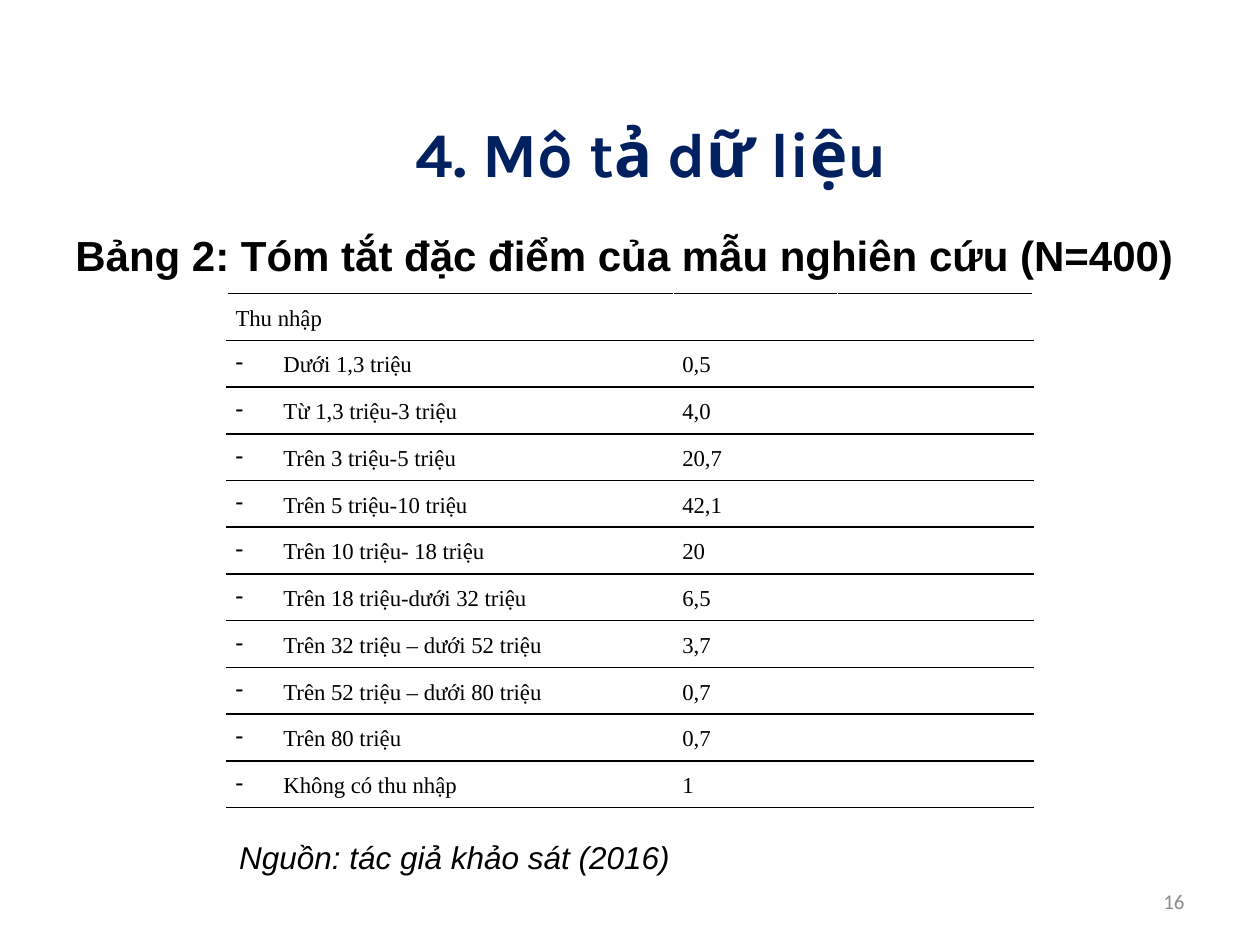
import pptx
import pptx.util
import pptx.dml.color
import pptx.enum.text
import pptx.oxml.ns
import lxml.etree

WIDE, HIGH = 10, 7.5
Inch, Pt = pptx.util.Inches, pptx.util.Pt
Align, Anchor = pptx.enum.text.PP_ALIGN, pptx.enum.text.MSO_ANCHOR

ROWS = [
    ("Thu nhập", ""),
    ("Dưới 1,3 triệu", "0,5"),
    ("Từ 1,3 triệu-3 triệu", "4,0"),
    ("Trên 3 triệu-5 triệu", "20,7"),
    ("Trên 5 triệu-10 triệu", "42,1"),
    ("Trên 10 triệu- 18 triệu", "20"),
    ("Trên 18 triệu-dưới 32 triệu", "6,5"),
    ("Trên 32 triệu – dưới 52 triệu", "3,7"),
    ("Trên 52 triệu – dưới 80 triệu", "0,7"),
    ("Trên 80 triệu", "0,7"),
    ("Không có thu nhập", "1"),
]
COLS = (3.54, 1.3, 1.55)


def color(code):
    return pptx.dml.color.RGBColor.from_string(code)


def node(parent, tag, **attrs):
    return lxml.etree.SubElement(parent, pptx.oxml.ns.qn(tag), attrs)


def style(para, face, size, code="000000", bold=False, italic=False):
    font = para.font
    font.name, font.size = face, Pt(size)
    font.bold, font.italic = bold, italic
    font.color.rgb = color(code)


def label(slide, box, text, face, size, align=Align.LEFT,
          anchor=Anchor.MIDDLE, **look):
    """Put one line of text in a box."""
    frame = slide.shapes.add_textbox(*map(Inch, box)).text_frame
    frame.word_wrap = True
    frame.vertical_anchor = anchor
    para = frame.paragraphs[0]
    para.text, para.alignment = text, align
    style(para, face, size, **look)


def rule(cell, side):
    """Draw a thin black line on one side of a cell."""
    line = node(cell._tc.get_or_add_tcPr(), side, w=str(Pt(1)))
    node(node(line, "a:solidFill"), "a:srgbClr", val="000000")


def dash(para):
    """Give a paragraph a hanging dash."""
    props = para._p.get_or_add_pPr()
    props.set("marL", str(Inch(0.38)))
    props.set("indent", str(-Inch(0.38)))
    node(props, "a:buChar", char="-")


def grid(slide, box):
    """Income table: a heading row, then dashed items with their shares."""
    frame = slide.shapes.add_table(len(ROWS), len(COLS), *map(Inch, box))
    table = frame.table
    table.first_row = table.horz_banding = False
    for col, share in zip(table.columns, COLS):
        col.width = Inch(box[2] * share / sum(COLS))
    for r, row in enumerate(ROWS):
        table.rows[r].height = Inch(box[3] / len(ROWS))
        for c in range(len(COLS)):
            cell = table.cell(r, c)
            cell.margin_left = cell.margin_right = Inch(0.07)
            cell.margin_top = cell.margin_bottom = 0
            rule(cell, "a:lnT")
            rule(cell, "a:lnB")
            cell.fill.solid()
            cell.fill.fore_color.rgb = color("FFFFFF")
            para = cell.text_frame.paragraphs[0]
            if c < len(row) and row[c]:
                para.text = row[c]
                para.alignment, para.line_spacing = Align.JUSTIFY, 1.5
                if r and c == 0:
                    dash(para)
            style(para, "Times New Roman", 13)


def main():
    deck = pptx.Presentation()
    deck.slide_width, deck.slide_height = Inch(WIDE), Inch(HIGH)
    slide = deck.slides.add_slide(deck.slide_layouts[6])
    left, wide = 0.18 * WIDE, 0.64 * WIDE

    # Title and table caption
    label(slide, (0.67, 0.83, 0.9 * WIDE, 0.1 * HIGH), "4. Mô tả dữ liệu",
          "Karla", 36, Align.CENTER, code="002060", bold=True)
    label(slide, (0.05 * WIDE, 1.77, 0.9 * WIDE, 0.66 * HIGH),
          "Bảng 2: Tóm tắt đặc điểm của mẫu nghiên cứu (N=400)",
          "Arial", 24, anchor=Anchor.TOP, bold=True)

    # Slide number
    label(slide, (7.17, 6.95, 2.33, 0.4), "16", "Calibri", 12,
          Align.RIGHT, code="8C8C8C")

    # Table and its source line
    grid(slide, (left, 2.33, wide, 4.08))
    label(slide, (left, 0.88 * HIGH, 6.86, 0.4),
          "Nguồn: tác giả khảo sát (2016)", "Arial", 18, italic=True)

    deck.save("out.pptx")


if __name__ == "__main__":
    main()
